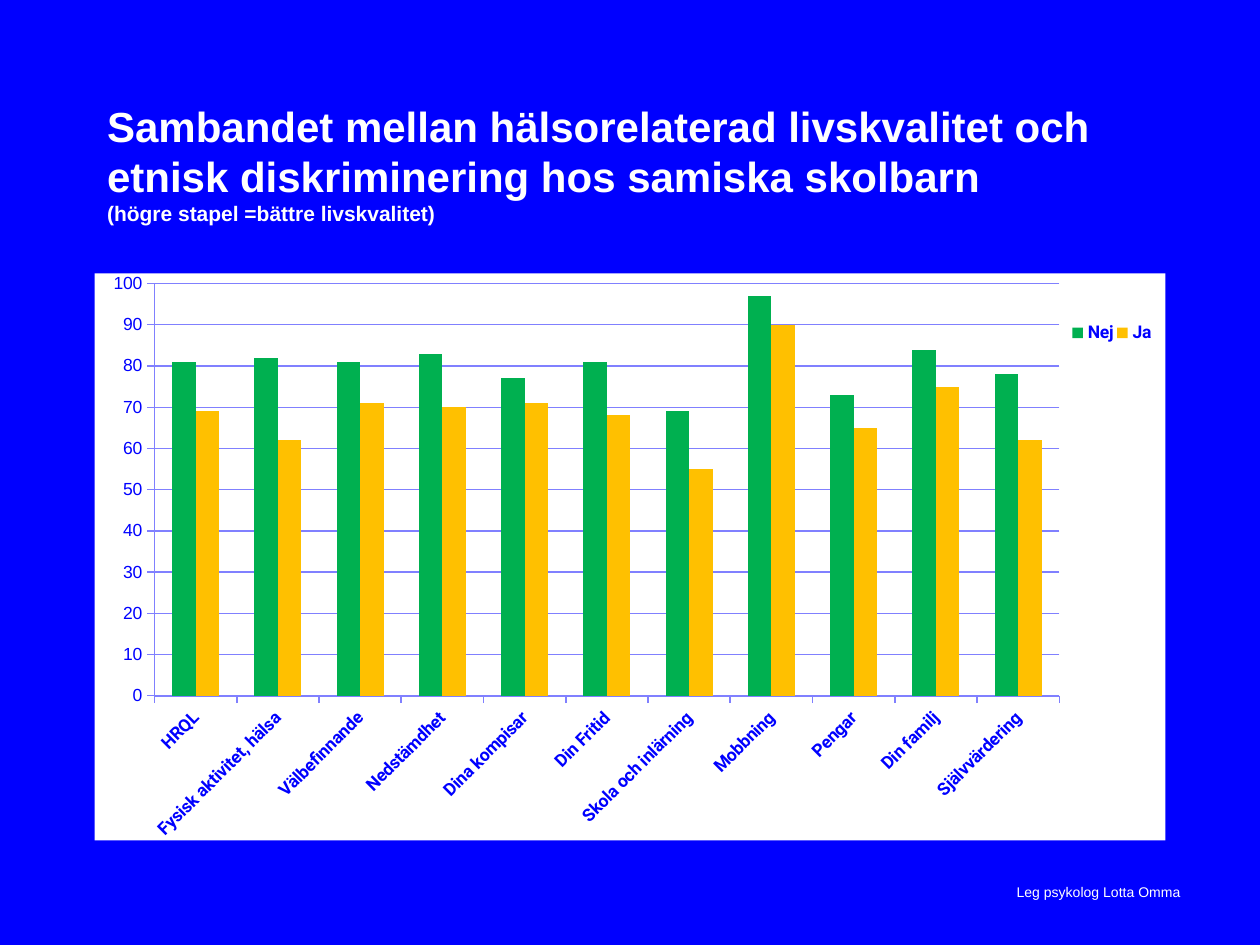
from lxml.etree import SubElement
from pptx import Presentation
from pptx.chart.data import CategoryChartData
from pptx.dml.color import RGBColor
from pptx.enum.chart import XL_CHART_TYPE, XL_LEGEND_POSITION, XL_TICK_MARK
from pptx.enum.text import MSO_ANCHOR, PP_ALIGN
from pptx.oxml import parse_xml
from pptx.oxml.ns import nsdecls, qn
from pptx.util import Inches, Pt

COLORS = {"blue": "0000FF", "white": "FFFFFF", "axis": "8080FF",
          "Nej": "00B050", "Ja": "FFC000"}
SCORES = [
    ("HRQL", 81, 69),
    ("Fysisk aktivitet, hälsa", 82, 62),
    ("Välbefinnande", 81, 71),
    ("Nedstämdhet", 83, 70),
    ("Dina kompisar", 77, 71),
    ("Din Fritid", 81, 68),
    ("Skola och inlärning", 69, 55),
    ("Mobbning", 97, 90),
    ("Pengar", 73, 65),
    ("Din familj", 84, 75),
    ("Självvärdering", 78, 62),
]
MARGIN, CONTENT_WIDTH = 0.75, 8.5


def color(name):
    return RGBColor.from_string(COLORS[name])


def style_font(font, size, color_name, bold=False, face="Arial"):
    font.name, font.size, font.bold = face, Pt(size), bold
    font.color.rgb = color(color_name)


def add_run(paragraph, text, size, bold=False):
    run = paragraph.add_run()
    run.text = text
    style_font(run.font, size, "white", bold)


def place(shape, left, top, width, height):
    shape.left, shape.top = Inches(left), Inches(top)
    shape.width, shape.height = Inches(width), Inches(height)


def add_title(slide):
    title = slide.shapes.title
    place(title, MARGIN, 0.67, CONTENT_WIDTH, 1.25)
    title.text_frame.vertical_anchor = MSO_ANCHOR.MIDDLE
    heading = title.text_frame.paragraphs[0]
    heading.alignment = PP_ALIGN.LEFT
    add_run(heading, "Sambandet mellan hälsorelaterad livskvalitet och "
                     "etnisk diskriminering hos samiska skolbarn", 24, True)
    heading.add_line_break()
    add_run(heading, "(högre stapel =bättre livskvalitet)", 12, True)


def add_author(slide):
    author = slide.shapes.add_textbox(Inches(7.44), Inches(6.83),
                                      Inches(2.56), Inches(0.5))
    author.text_frame.word_wrap = False
    author.text_frame.vertical_anchor = MSO_ANCHOR.MIDDLE
    credit = author.text_frame.paragraphs[0]
    credit.alignment = PP_ALIGN.CENTER
    add_run(credit, "Leg psykolog Lotta Omma", 8)


def set_layout(element, x, y, w, h, inner=False):
    """Place a chart part by shares of the chart's size."""
    for old in element.findall(qn("c:layout")):
        element.remove(old)
    layout = parse_xml(f"<c:layout {nsdecls('c')}/>")
    manual = SubElement(layout, qn("c:manualLayout"))
    settings = [("layoutTarget", "inner")] if inner else []
    settings += [("xMode", "edge"), ("yMode", "edge"),
                 ("x", x), ("y", y), ("w", w), ("h", h)]
    for tag, value in settings:
        SubElement(manual, qn(f"c:{tag}")).set("val", str(value))
    element.insert(0 if inner else 1, layout)


def style_axis(axis):
    axis.major_tick_mark = XL_TICK_MARK.OUTSIDE
    axis.minor_tick_mark = XL_TICK_MARK.NONE
    axis.format.line.color.rgb = color("axis")
    axis.format.line.width = Pt(0.75)


def fill_chart_area(chart):
    area = parse_xml(
        f'<c:spPr {nsdecls("c", "a")}><a:solidFill><a:srgbClr val="{COLORS["white"]}"/>'
        "</a:solidFill><a:ln><a:noFill/></a:ln></c:spPr>")
    chart.element.find(qn("c:chart")).addnext(area)


def add_chart(slide):
    data = CategoryChartData()
    labels, no_scores, yes_scores = zip(*SCORES)
    data.categories = labels
    data.add_series("Nej", no_scores)
    data.add_series("Ja", yes_scores)
    chart = slide.shapes.add_chart(
        XL_CHART_TYPE.COLUMN_CLUSTERED, Inches(MARGIN), Inches(2.17),
        Inches(CONTENT_WIDTH), Inches(4.5), data).chart
    chart.has_title = False
    style_font(chart.font, 10, "blue")
    fill_chart_area(chart)

    plot = chart.plots[0]
    plot.gap_width, plot.overlap, plot.vary_by_categories = 150, 0, False
    for series in plot.series:
        series.format.fill.solid()
        series.format.fill.fore_color.rgb = color(series.name)

    topics, scale = chart.category_axis, chart.value_axis
    style_axis(topics)
    style_axis(scale)
    style_font(topics.tick_labels.font, 10, "blue", True, "Roboto")
    topics.format.line.width = Pt(1)
    label_body = topics._element.find(qn("c:txPr")).find(qn("a:bodyPr"))
    label_body.set("rot", "-2700000")
    label_body.set("vert", "horz")
    scale.minimum_scale, scale.maximum_scale, scale.major_unit = 0, 100, 10
    scale.tick_labels.number_format = "General"
    scale.tick_labels.number_format_is_linked = False
    scale.has_major_gridlines = True
    scale.major_gridlines.format.line.color.rgb = color("axis")
    scale.major_gridlines.format.line.width = Pt(0.75)

    chart.has_legend = True
    legend = chart.legend
    legend.position = XL_LEGEND_POSITION.RIGHT
    legend.include_in_layout = False
    style_font(legend.font, 10, "blue", True, "Roboto")
    plot_area = chart.element.find(qn("c:chart")).find(qn("c:plotArea"))
    set_layout(plot_area, 0.056, 0.018, 0.845, 0.727, inner=True)
    set_layout(legend._element, 0.91, 0.05, 0.08, 0.11)


def main():
    deck = Presentation()
    deck.slide_width, deck.slide_height = Inches(10), Inches(7.5)
    slide = deck.slides.add_slide(deck.slide_layouts[5])
    slide.background.fill.solid()
    slide.background.fill.fore_color.rgb = color("blue")
    add_title(slide)
    add_author(slide)
    add_chart(slide)
    deck.save("out.pptx")


if __name__ == "__main__":
    main()
